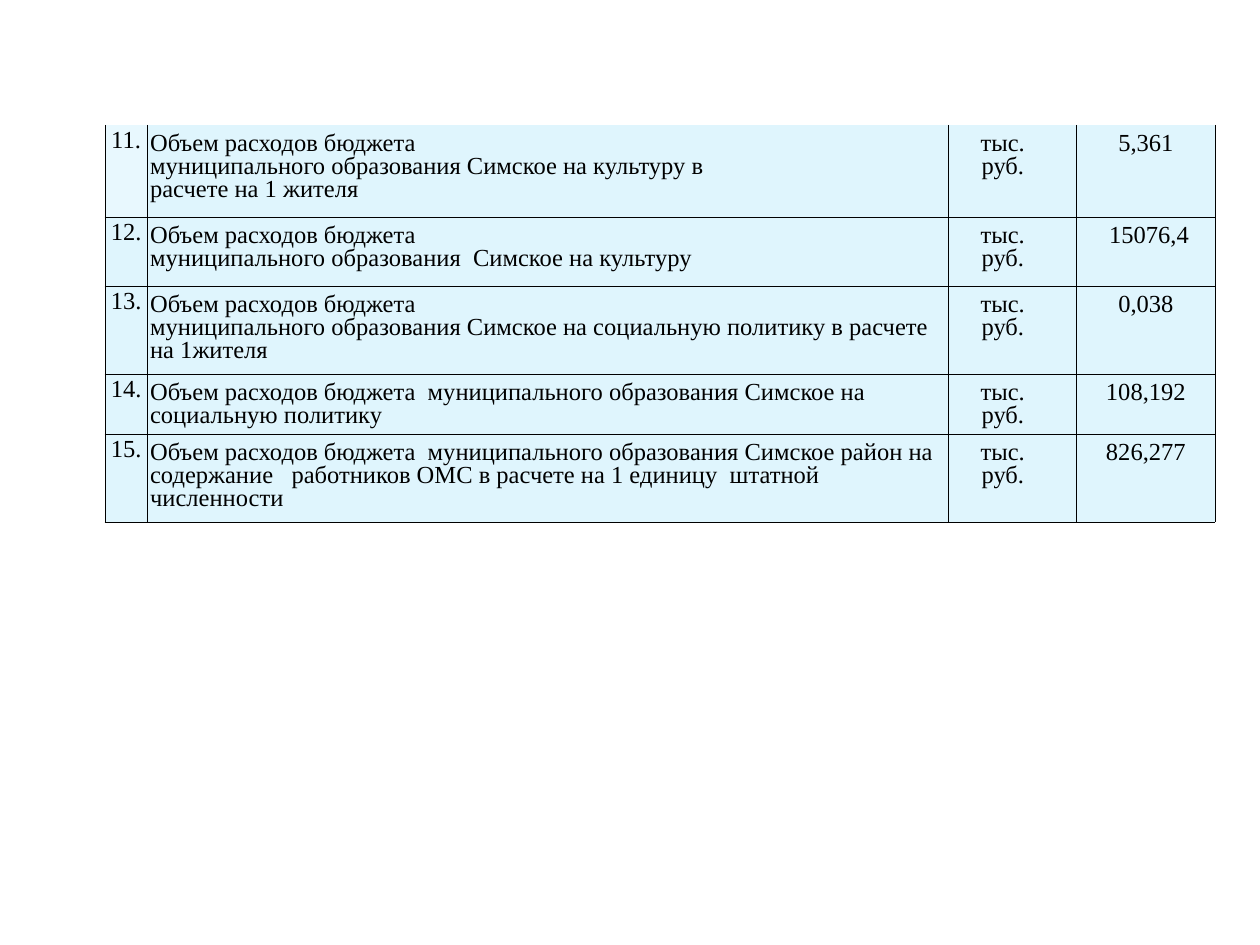
from lxml.etree import SubElement
from pptx import Presentation
from pptx.dml.color import RGBColor
from pptx.enum.text import PP_ALIGN
from pptx.oxml.ns import qn
from pptx.util import Pt

hues = {"ink": "000000", "pale": "E8F8FE", "blue": "DFF5FD"}
cols = [24.5, 457.2, 73.6, 79.4]
rows = [52.6, 39.4, 50.3, 34.4, 50.3]
unit = "тыс.\nруб."
data = [
    ("11.", "Объем расходов бюджета\nмуниципального образования Симское на культуру в\nрасчете на 1 жителя", unit, "5,361"),
    ("12.", "Объем расходов бюджета\nмуниципального образования  Симское на культуру", unit, "15076,4"),
    ("13.", "Объем расходов бюджета\nмуниципального образования Симское на социальную политику в расчете на 1жителя", unit, "0,038"),
    ("14.", "Объем расходов бюджета  муниципального образования Симское на социальную политику", unit, "108,192"),
    ("15.", "Объем расходов бюджета  муниципального образования Симское район на содержание   работников ОМС в расчете на 1 единицу  штатной численности", unit, "826,277"),
]


def edge(cell, side, show):
    line = SubElement(cell._tc.get_or_add_tcPr(), qn("a:ln" + side), w=str(Pt(0.11)))
    if show:
        fill = SubElement(line, qn("a:solidFill"))
        SubElement(fill, qn("a:srgbClr"), val=hues["ink"])
    else:
        SubElement(line, qn("a:noFill"))


deck = Presentation()
deck.slide_width, deck.slide_height = Pt(720), Pt(540)
slide = deck.slides.add_slide(deck.slide_layouts[6])
grid = slide.shapes.add_table(
    len(rows), len(cols), Pt(59.8), Pt(71.4), Pt(sum(cols)), Pt(sum(rows))
).table
grid.first_row = grid.horz_banding = False
for col, width in zip(grid.columns, cols):
    col.width = Pt(width)
for row, height in zip(grid.rows, rows):
    row.height = Pt(height)

for r, texts in enumerate(data):
    for c, text in enumerate(texts):
        cell = grid.cell(r, c)
        for side in "LRTB":
            edge(cell, side, side != "T" or r > 0)
        cell.fill.solid()
        tone = "pale" if r == c == 0 else "blue"
        cell.fill.fore_color.rgb = RGBColor.from_string(hues[tone])
        cell.margin_left = Pt(5 if text == "15076,4" else 1.5)
        cell.margin_right = Pt(12 if c == 2 else 1.5)
        cell.margin_top = Pt(2.9 if c == 0 else 4.3)
        cell.margin_bottom = Pt(0)
        cell.text_frame.text = text
        for para in cell.text_frame.paragraphs:
            para.alignment = PP_ALIGN.LEFT if c == 1 else PP_ALIGN.CENTER
            para.line_spacing = 0.86
            for run in para.runs:
                run.font.name = "Times New Roman"
                run.font.size = Pt(14)
                run.font.color.rgb = RGBColor.from_string(hues["ink"])

deck.save("out.pptx")
